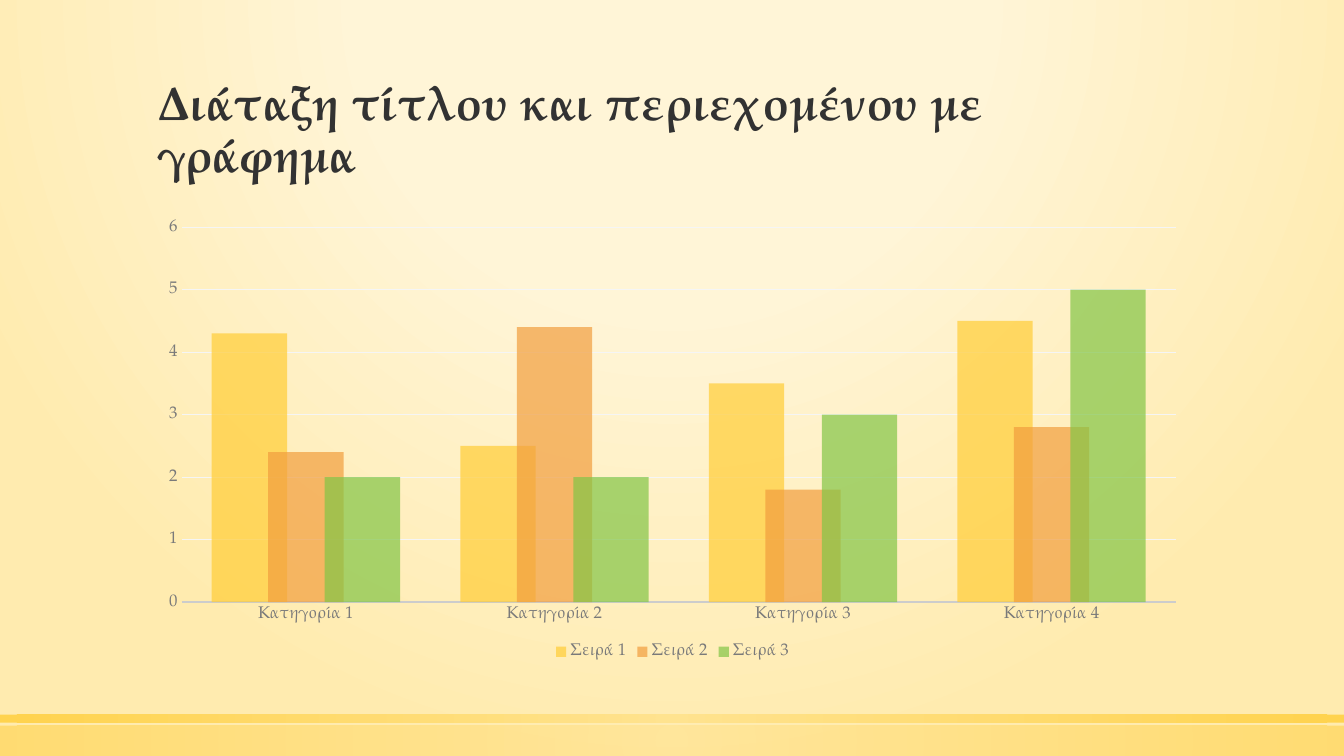
import pptx
import pptx.chart.data
import pptx.dml.color
import pptx.enum.chart
import pptx.enum.shapes
import pptx.enum.text
import pptx.oxml
import pptx.oxml.ns
import pptx.util

Inches = pptx.util.Inches
Pt = pptx.util.Pt
qn = pptx.oxml.ns.qn

COLORS = {
    "cream": "FFF5D7", "sand": "FFEBAF", "light_gold": "FFE186",
    "gold": "FFCD36", "orange": "F29E3E", "green": "83C546",
    "title": "323232", "label": "7A7A7A", "axis": "CCCCCC", "grid": "F5F5F5",
}
CATEGORIES = ["Κατηγορία 1", "Κατηγορία 2", "Κατηγορία 3", "Κατηγορία 4"]
SERIES = [
    ("Σειρά 1", (4.3, 2.5, 3.5, 4.5), "gold"),
    ("Σειρά 2", (2.4, 4.4, 1.8, 2.8), "orange"),
    ("Σειρά 3", (2, 2, 3, 5), "green"),
]
WIDTH, HEIGHT = 13.33, 7.5
LEFT, CONTENT_WIDTH = 1.47, 10.4


class SlideBuilder:
    font_name = "TeX Gyre Pagella"

    def __init__(self, page):
        self.page = page

    def color(self, name):
        return pptx.dml.color.RGBColor.from_string(COLORS[name])

    def style_font(self, font, size, color):
        font.name = self.font_name
        font.size = Pt(size)
        font.color.rgb = self.color(color)

    def style_line(self, line, color, width):
        line.color.rgb = self.color(color)
        line.width = Pt(width)

    def set_alpha(self, color_element, percent):
        alpha = color_element.makeelement(qn("a:alpha"), {"val": str(percent * 1000)})
        color_element.append(alpha)

    def radial_gradient(self, element, stops, center):
        """Swap the element's solid fill for a circular gradient."""
        left, top, right, bottom = (value * 1000 for value in center)
        gradient = pptx.oxml.parse_xml(
            f'<a:gradFill {pptx.oxml.ns.nsdecls("a")} rotWithShape="1"><a:gsLst/>'
            f'<a:path path="circle"><a:fillToRect l="{left}" t="{top}" '
            f'r="{right}" b="{bottom}"/></a:path></a:gradFill>')
        for position, color, alpha in stops:
            stop = gradient[0].makeelement(qn("a:gs"), {"pos": str(position * 1000)})
            tint = stop.makeelement(qn("a:srgbClr"), {"val": COLORS[color]})
            if alpha < 100:
                self.set_alpha(tint, alpha)
            stop.append(tint)
            gradient[0].append(stop)
        solid = element.find(".//" + qn("a:solidFill"))
        solid.getparent().replace(solid, gradient)

    def background(self, stops, center):
        fill = self.page.background.fill
        fill.solid()
        fill.fore_color.rgb = self.color("sand")
        self.radial_gradient(self.page.element, stops, center)

    def band(self, top, height, alpha):
        box = self.page.shapes.add_shape(
            pptx.enum.shapes.MSO_SHAPE.RECTANGLE,
            0, Inches(top), Inches(WIDTH), Inches(height))
        box.shadow.inherit = False
        box.line.fill.background()
        box.fill.solid()
        box.fill.fore_color.rgb = self.color("gold")
        stops = [(0, "light_gold", alpha), (100, "gold", alpha)]
        self.radial_gradient(box.element, stops, (50, 50, 50, 50))

    def title(self, text, top, height):
        box = self.page.shapes.title
        box.left, box.top = Inches(LEFT), Inches(top)
        box.width, box.height = Inches(CONTENT_WIDTH), Inches(height)
        frame = box.text_frame
        frame.word_wrap = True
        frame.auto_size = pptx.enum.text.MSO_AUTO_SIZE.NONE
        frame.vertical_anchor = pptx.enum.text.MSO_ANCHOR.BOTTOM
        para = frame.paragraphs[0]
        para.alignment = pptx.enum.text.PP_ALIGN.LEFT
        para.line_spacing = 0.9
        span = para.add_run()
        span.text = text
        self.style_font(span.font, 34, "title")
        span.font.bold = True

    def column_chart(self, top, height):
        data = pptx.chart.data.CategoryChartData()
        data.categories = CATEGORIES
        for name, values, _ in SERIES:
            data.add_series(name, values)
        chart = self.page.shapes.add_chart(
            pptx.enum.chart.XL_CHART_TYPE.COLUMN_CLUSTERED,
            Inches(LEFT), Inches(top), Inches(CONTENT_WIDTH), Inches(height), data).chart
        chart.has_title = False
        self.style_font(chart.font, 10, "title")

        # Columns
        plot = chart.plots[0]
        plot.gap_width, plot.overlap = 80, 25
        plot.vary_by_categories = False
        for series, (_, _, color) in zip(plot.series, SERIES):
            series.format.fill.solid()
            series.format.fill.fore_color.rgb = self.color(color)
            self.set_alpha(series.format.fill._xPr.find(".//" + qn("a:srgbClr")), 70)

        # Axes
        for axis in (chart.category_axis, chart.value_axis):
            axis.major_tick_mark = pptx.enum.chart.XL_TICK_MARK.NONE
            axis.minor_tick_mark = pptx.enum.chart.XL_TICK_MARK.NONE
            self.style_font(axis.tick_labels.font, 12, "label")
        self.style_line(chart.category_axis.format.line, "axis", 1.25)
        scale = chart.value_axis
        scale.minimum_scale, scale.maximum_scale, scale.major_unit = 0, 6, 1
        scale.format.line.fill.background()
        scale.has_major_gridlines = True
        self.style_line(scale.major_gridlines.format.line, "grid", 0.75)

        # Legend
        chart.has_legend = True
        chart.legend.position = pptx.enum.chart.XL_LEGEND_POSITION.BOTTOM
        chart.legend.include_in_layout = False
        self.style_font(chart.legend.font, 12, "label")


def main():
    deck = pptx.Presentation()
    deck.slide_width, deck.slide_height = Inches(WIDTH), Inches(HEIGHT)
    title_only = deck.slide_layouts[5]
    builder = SlideBuilder(deck.slides.add_slide(title_only))

    # Background and bottom bands
    builder.background(
        [(0, "cream", 59), (40, "cream", 66), (100, "sand", 100)], (50, -80, 50, 180))
    builder.band(top=7.2, height=0.3, alpha=50)
    builder.band(top=7.09, height=0.08, alpha=80)

    # Title and chart
    builder.title("Διάταξη τίτλου και περιεχομένου με γράφημα", top=0.51, height=1.35)
    builder.column_chart(top=2.08, height=4.51)

    deck.save("out.pptx")


if __name__ == "__main__":
    main()
